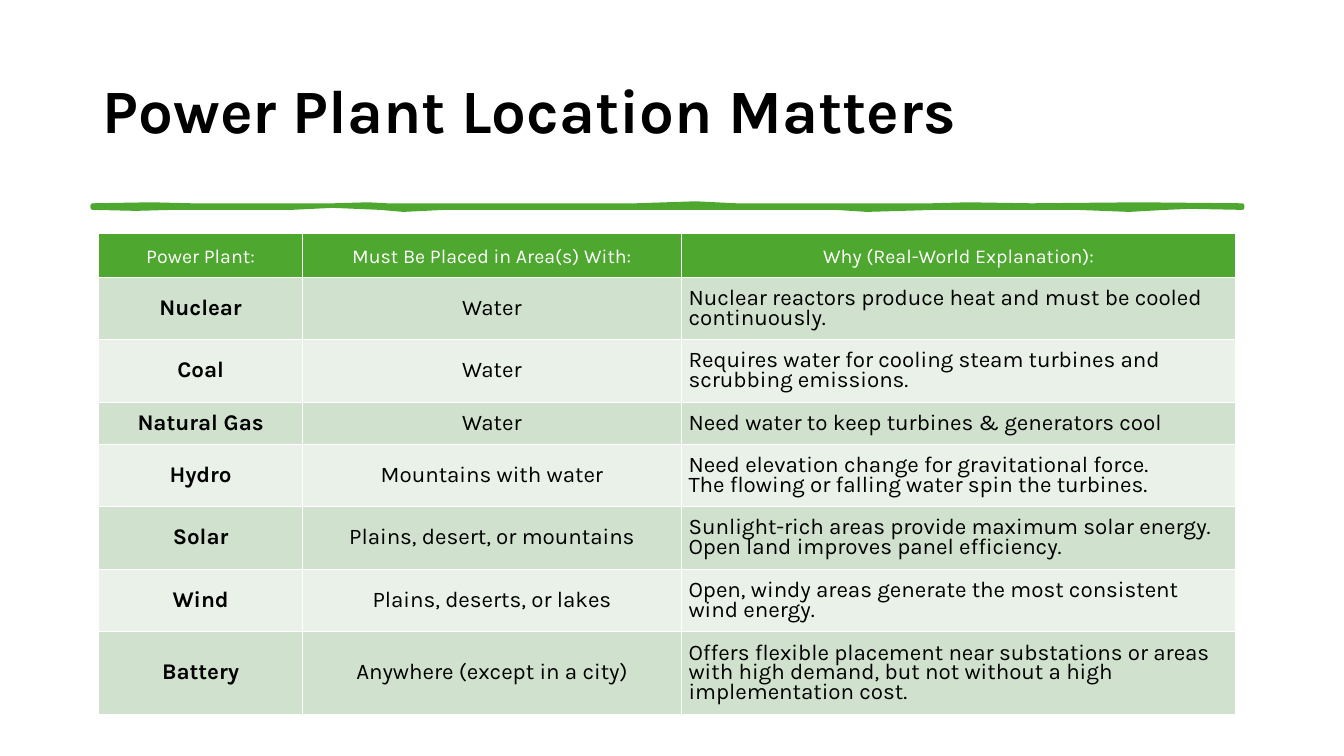
from lxml import etree
from pptx import Presentation
from pptx.dml.color import RGBColor
from pptx.enum.text import MSO_ANCHOR, PP_ALIGN
from pptx.oxml.ns import qn
from pptx.util import Inches, Pt

MIDDLE = MSO_ANCHOR.MIDDLE
LEFT, CENTER = PP_ALIGN.LEFT, PP_ALIGN.CENTER
GREEN, WHITE, BLACK = "4EA72E", "FFFFFF", "000000"
BANDS = ["E9F1E8", "D0E1CD"]


def color(target, code):
    target.rgb = RGBColor.from_string(code)


def style(para, size, bold, code):
    font = para.font
    font.name, font.size, font.bold = "Karla", Pt(size), bold
    color(font.color, code)


deck = Presentation()
deck.slide_width, deck.slide_height = Inches(13.33), Inches(7.5)
slide = deck.slides.add_slide(deck.slide_layouts[5])

# Title
title = slide.shapes.title
title.left, title.top = Inches(0.92), Inches(0.4)
title.width, title.height = Inches(11.5), Inches(1.45)
frame = title.text_frame
frame.text = "Power Plant Location Matters"
frame.vertical_anchor = MIDDLE
frame.word_wrap = True
para = frame.paragraphs[0]
para.alignment = LEFT
para.line_spacing = 0.9
style(para, 44, True, BLACK)

# Hand-drawn rule: upper edge left to right, lower edge back again
upper = [(0.92, 2.04), (1.5, 2.03), (1.9, 2.04), (2.44, 2.04), (3.31, 2.04),
         (3.65, 2.03), (3.84, 2.04), (4.6, 2.04), (5.48, 2.04), (5.89, 2.04),
         (6.31, 2.04), (6.9, 2.02), (7.3, 2.04), (8.06, 2.04), (8.48, 2.04),
         (9.24, 2.04), (9.6, 2.03), (10.23, 2.04), (11.3, 2.03), (12.32, 2.04)]
lower = [(12.32, 2.06), (11.8, 2.05), (11.56, 2.06), (11.2, 2.08),
         (10.68, 2.06), (9.81, 2.06), (9.28, 2.06), (8.6, 2.08), (8.29, 2.06),
         (7.53, 2.06), (7.11, 2.06), (6.35, 2.06), (5.7, 2.06), (5.06, 2.06),
         (4.41, 2.06), (4.0, 2.08), (3.77, 2.06), (3.3, 2.04), (2.89, 2.06),
         (2.13, 2.06), (1.71, 2.06), (1.35, 2.07), (0.92, 2.06)]
edge = [(Inches(x), Inches(y)) for x, y in upper + lower]
pen = slide.shapes.build_freeform(*edge[0])
pen.add_line_segments(edge[1:], close=True)
rule = pen.convert_to_shape()
rule.shadow.inherit = False
rule.fill.solid()
color(rule.fill.fore_color, GREEN)
rule.line.width = Pt(3.25)
color(rule.line.color, GREEN)
etree.SubElement(rule.line._get_or_add_ln(), qn("a:round"))

# Table
rows = [
    ("Power Plant:", "Must Be Placed in Area(s) With:",
     "Why (Real-World Explanation):"),
    ("Nuclear", "Water",
     "Nuclear reactors produce heat and must be cooled continuously."),
    ("Coal", "Water",
     "Requires water for cooling steam turbines and scrubbing emissions."),
    ("Natural Gas", "Water", "Need water to keep turbines & generators cool"),
    ("Hydro", "Mountains with water",
     "Need elevation change for gravitational force.\n"
     "The flowing or falling water spin the turbines."),
    ("Solar", "Plains, desert, or mountains",
     "Sunlight-rich areas provide maximum solar energy.\n"
     "Open land improves panel efficiency."),
    ("Wind", "Plains, deserts, or lakes",
     "Open, windy areas generate the most consistent wind energy."),
    ("Battery", "Anywhere (except in a city)",
     "Offers flexible placement near substations or areas with high demand, "
     "but not without a high implementation cost."),
]
widths = [2.02, 3.76, 5.5]
heights = [0.43, 0.62, 0.62, 0.42, 0.62, 0.62, 0.62, 0.82]
table = slide.shapes.add_table(
    len(rows), len(widths), Inches(0.98), Inches(2.32),
    Inches(sum(widths)), Inches(sum(heights))).table
for col, width in zip(table.columns, widths):
    col.width = Inches(width)

for r, texts in enumerate(rows):
    table.rows[r].height = Inches(heights[r])
    head = r == 0
    for c, text in enumerate(texts):
        cell = table.cell(r, c)
        cell.text = text
        cell.vertical_anchor = MIDDLE
        cell.margin_left = cell.margin_right = Inches(0.07)
        cell.margin_top, cell.margin_bottom = Inches(0.1), Inches(0.05)
        cell.fill.solid()
        color(cell.fill.fore_color, GREEN if head else BANDS[r % 2])
        for para in cell.text_frame.paragraphs:
            para.alignment = CENTER if head or c < 2 else LEFT
            para.line_spacing = Pt(14.2)
            style(para, 14 if head else 16, not head and c == 0,
                  WHITE if head else BLACK)

deck.save("out.pptx")
